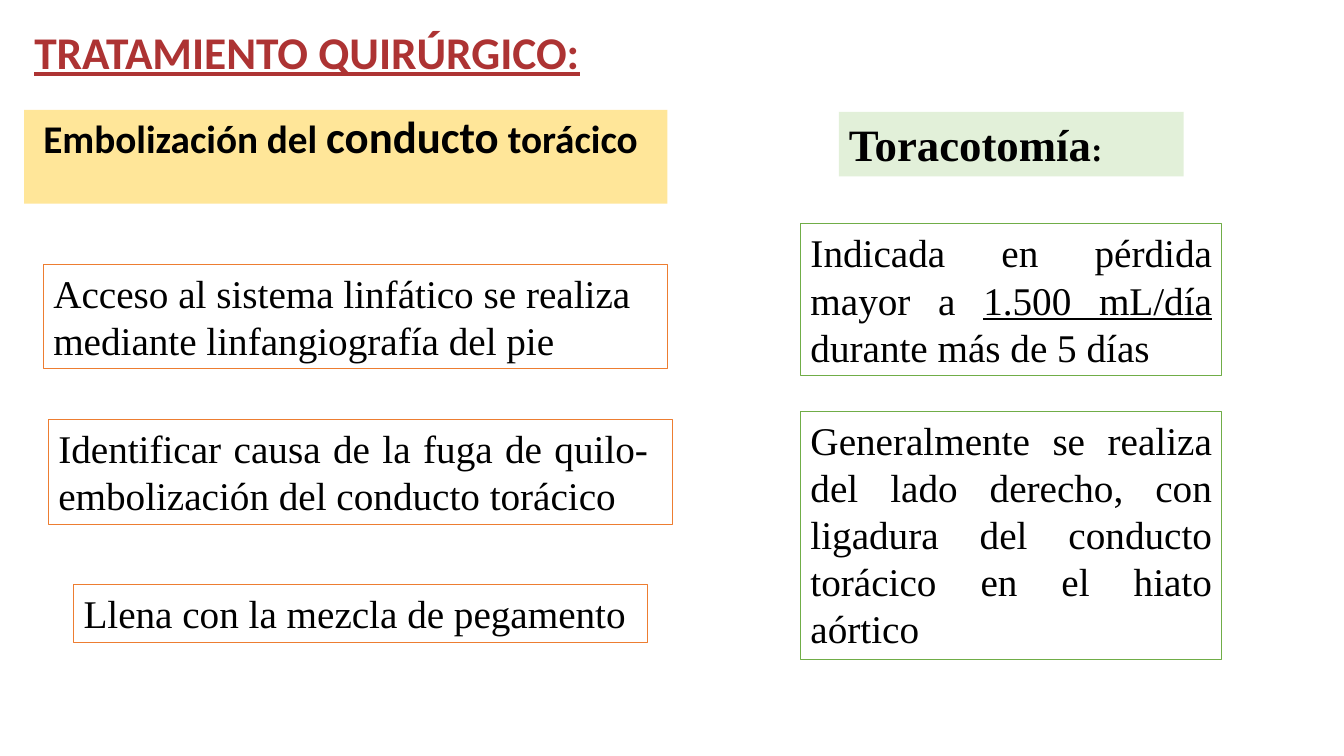
from pptx import Presentation
from pptx.dml.color import RGBColor
from pptx.enum.shapes import MSO_SHAPE as Shape
from pptx.enum.text import MSO_ANCHOR as Anchor, MSO_AUTO_SIZE as Fit, PP_ALIGN as Align
from pptx.util import Inches, Pt

SERIF = "Times New Roman"
SANS = "Calibri"
ORANGE = "ED7D31"
GREEN = "70AD47"


def color(value):
    return RGBColor.from_string(value)


def add_span(para, text, size=28, font=SERIF, fill="000000", bold=False, underline=False):
    span = para.add_run()
    span.text = text
    span.font.size = Pt(size)
    span.font.name = font
    span.font.color.rgb = color(fill)
    span.font.bold = bold
    span.font.underline = underline


def add_box(page, left, top, width, height, fill=None, line=None, align=Align.LEFT):
    box = page.shapes.add_shape(
        Shape.RECTANGLE, Inches(left), Inches(top), Inches(width), Inches(height))
    box.shadow.inherit = False
    if fill:
        box.fill.solid()
        box.fill.fore_color.rgb = color(fill)
    else:
        box.fill.background()
    if line:
        box.line.color.rgb = color(line)
        box.line.width = Pt(0.75)
    else:
        box.line.fill.background()
    frame = box.text_frame
    frame.word_wrap = True
    frame.auto_size = Fit.NONE
    frame.vertical_anchor = Anchor.TOP
    frame.paragraphs[0].alignment = align
    return frame


def add_title(page, left, top, width, height):
    title = page.shapes.title
    title.left, title.top = Inches(left), Inches(top)
    title.width, title.height = Inches(width), Inches(height)
    frame = title.text_frame
    frame.word_wrap = True
    frame.auto_size = Fit.NONE
    frame.vertical_anchor = Anchor.TOP
    para = frame.paragraphs[0]
    para.alignment = Align.LEFT
    para.line_spacing = 0.9
    add_span(para, "TRATAMIENTO QUIRÚRGICO:", 32.4, SANS, "AD3333", True, True)


def add_embolization(page, left, top, width):
    heading = add_box(page, left, top, width, 0.93, fill="FFE699")
    heading.margin_left = Inches(0.19)
    para = heading.paragraphs[0]
    para.line_spacing = 0.9
    for text, size in (("Embolización del ", 28), ("conducto", 32), (" torácico", 28)):
        add_span(para, text, size, SANS, bold=True)

    access = add_box(page, left + 0.19, top + 1.53, width - 0.19, 1.04, line=ORANGE)
    add_span(access.paragraphs[0],
             "Acceso al sistema linfático se realiza mediante linfangiografía del pie")

    cause = add_box(page, left + 0.24, top + 3.07, width - 0.19, 1.04,
                    line=ORANGE, align=Align.JUSTIFY)
    cause.margin_right = Inches(0.24)
    add_span(cause.paragraphs[0],
             "Identificar causa de la fuga de quilo- embolización del conducto torácico")

    glue = add_box(page, left + 0.49, top + 4.71, width - 0.69, 0.57, line=ORANGE)
    glue.word_wrap = False
    add_span(glue.paragraphs[0], "Llena con la mezcla de pegamento")


def add_thoracotomy(page, left, top, width):
    heading = add_box(page, left + 0.38, top, width - 0.76, 0.64, fill="E2F0D9")
    add_span(heading.paragraphs[0], "Toracotomía", 32, bold=True)
    add_span(heading.paragraphs[0], ":", 24, bold=True)

    indication = add_box(page, left, top + 1.11, width, 1.51, line=GREEN, align=Align.JUSTIFY)
    para = indication.paragraphs[0]
    add_span(para, "Indicada en pérdida mayor a ")
    add_span(para, "1.500 mL/día ", underline=True)
    add_span(para, "durante más de 5 días")

    approach = add_box(page, left, top + 2.97, width, 2.46, line=GREEN, align=Align.JUSTIFY)
    add_span(approach.paragraphs[0],
             "Generalmente se realiza del lado derecho, con ligadura del conducto "
             "torácico en el hiato aórtico")


def main():
    deck = Presentation()
    deck.slide_width = Inches(13.33)
    deck.slide_height = Inches(7.5)
    page = deck.slides.add_slide(deck.slide_layouts[5])
    add_title(page, 0.24, 0.25, 11.5, 0.72)
    add_embolization(page, 0.24, 1.09, 6.38)
    add_thoracotomy(page, 7.94, 1.11, 4.18)
    deck.save("out.pptx")


if __name__ == "__main__":
    main()
